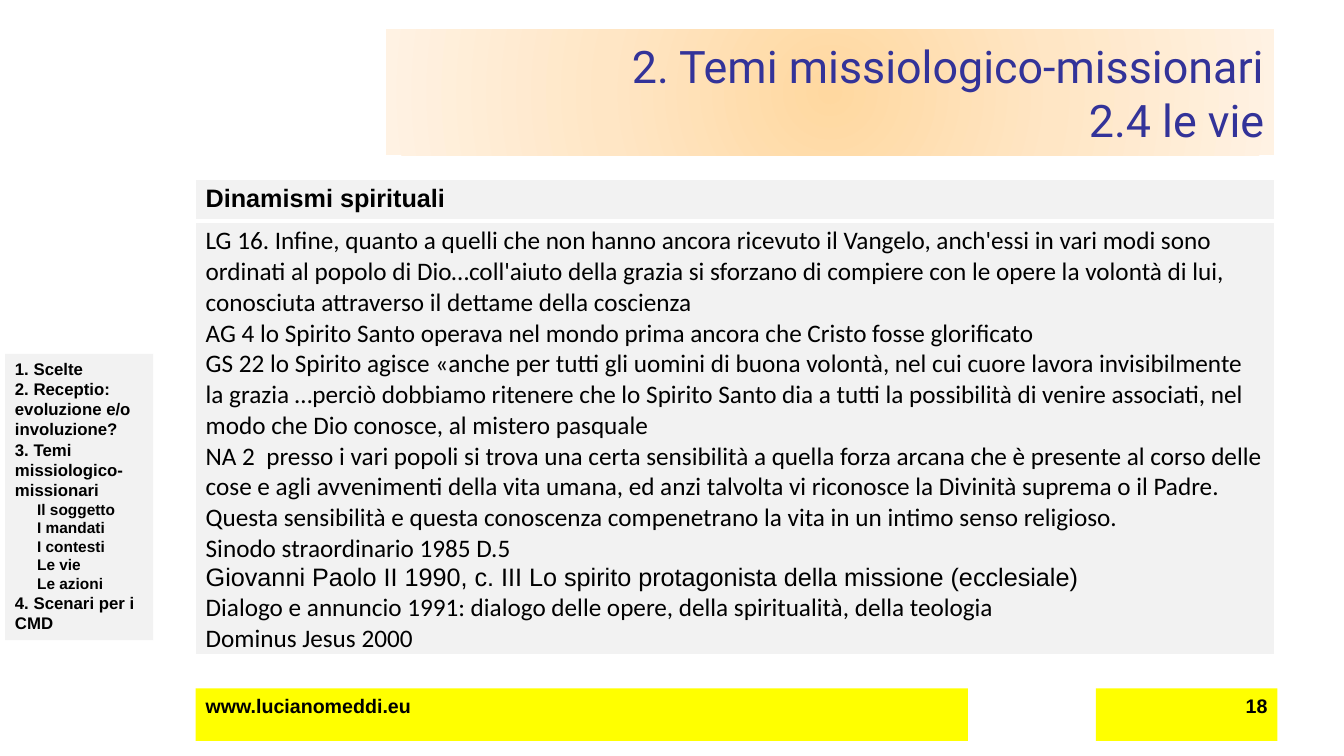
from lxml import etree
from pptx import Presentation
from pptx.dml.color import RGBColor
from pptx.enum.text import MSO_ANCHOR as Anchor, MSO_AUTO_SIZE as Auto, PP_ALIGN as Align
from pptx.oxml import parse_xml
from pptx.oxml.ns import nsdecls, qn
from pptx.util import Inches, Pt


def tint(code):
    return RGBColor.from_string(code)


def write(frame, text, first=False, size=18, font="Arial", color="000000",
          bold=False, align=Align.LEFT, left=0, hang=0):
    para = frame.paragraphs[0] if first else frame.add_paragraph()
    para.alignment = align
    if left:
        props = para._p.get_or_add_pPr()
        props.set("marL", str(Inches(left)))
        props.set("indent", str(Inches(hang)))
    for i, line in enumerate(text.split("\n")):
        if i:
            para.add_line_break()
        run = para.add_run()
        run.text = line
        run.font.size = Pt(size)
        run.font.name = font
        run.font.bold = bold
        run.font.color.rgb = tint(color)


class Deck:
    gray = "F2F2F2"
    gold = "FFFF00"
    navy = "333399"
    glow = [(0, "FFD8A0"), (50, "FFE6C5"), (100, "FFF2E3")]

    def __init__(self):
        self.show = Presentation()
        self.show.slide_width = Inches(13.33)
        self.show.slide_height = Inches(7.5)
        self.slide = self.show.slides.add_slide(self.show.slide_layouts[6])

    def box(self, area, fill, anchor=Anchor.TOP):
        shape = self.slide.shapes.add_textbox(*map(Inches, area))
        shape.fill.solid()
        shape.fill.fore_color.rgb = tint(fill)
        frame = shape.text_frame
        frame.word_wrap = True
        frame.auto_size = Auto.NONE
        frame.vertical_anchor = anchor
        return shape

    def shade(self, shape):
        stops = "".join(
            f'<a:gs pos="{pos * 1000}"><a:srgbClr val="{code}"/></a:gs>'
            for pos, code in self.glow)
        grad = parse_xml(
            f'<a:gradFill {nsdecls("a")} rotWithShape="1"><a:gsLst>{stops}</a:gsLst>'
            '<a:path path="circle"><a:fillToRect l="50000" t="50000" r="50000" b="50000"/>'
            '</a:path></a:gradFill>')
        props = shape.element.spPr
        props.replace(props.find(qn("a:solidFill")), grad)

    def title(self, area, text):
        shape = self.box(area, self.glow[-1][1], Anchor.MIDDLE)
        self.shade(shape)
        write(shape.text_frame, text, first=True, size=32, font="Roboto",
              color=self.navy, align=Align.RIGHT)

    def menu(self, area, items):
        frame = self.box(area, self.gray).text_frame
        frame.auto_size = Auto.SHAPE_TO_FIT_TEXT
        for i, (text, sub) in enumerate(items):
            look = dict(size=11, left=0.28, hang=-0.06) if sub else dict(size=12)
            write(frame, text, first=i == 0, bold=True, **look)

    def foot(self, area, text, align):
        frame = self.box(area, self.gold).text_frame
        write(frame, text, first=True, size=14, bold=True, align=align)

    def edge(self, cell, base):
        props = cell._tc.get_or_add_tcPr()
        for i, side in enumerate(("lnL", "lnR", "lnT", "lnB")):
            width = base if side == "lnB" else 1
            line = etree.Element(qn(f"a:{side}"), w=str(Pt(width)))
            fill = etree.SubElement(line, qn("a:solidFill"))
            etree.SubElement(fill, qn("a:srgbClr"), val="FFFFFF")
            props.insert(i, line)

    def table(self, area, rows, head, lines):
        grid = self.slide.shapes.add_table(2, 1, *map(Inches, area)).table
        for row, high in zip(grid.rows, rows):
            row.height = Inches(high)
        top, body = grid.cell(0, 0), grid.cell(1, 0)
        for cell, base in ((top, 3), (body, 1)):
            cell.fill.solid()
            cell.fill.fore_color.rgb = tint(self.gray)
            self.edge(cell, base)
        write(top.text_frame, head, first=True, bold=True)
        for i, (text, font) in enumerate(lines):
            write(body.text_frame, text, first=i == 0, font=font)


def main():
    deck = Deck()
    deck.menu((0.05, 3.51, 1.47, 2.84), [
        ("1. Scelte", False),
        ("2. Receptio: evoluzione e/o involuzione?", False),
        ("3. Temi missiologico-missionari", False),
        ("Il soggetto", True),
        ("I mandati", True),
        ("I contesti", True),
        ("Le vie", True),
        ("Le azioni", True),
        ("4. Scenari per i CMD", False),
    ])
    deck.title((3.83, 0.29, 8.81, 1.25), "2. Temi missiologico-missionari\n2.4 le vie")
    deck.foot((1.94, 6.83, 7.66, 0.52), "www.lucianomeddi.eu", Align.LEFT)
    deck.foot((10.87, 6.83, 1.8, 0.52), "18", Align.RIGHT)
    deck.table((1.94, 1.78, 10.7, 4.71), (0.41, 4.3), "Dinamismi spirituali", [
        ("LG 16. Infine, quanto a quelli che non hanno ancora ricevuto il Vangelo, "
         "anch'essi in vari modi sono ordinati al popolo di Dio…coll'aiuto della grazia "
         "si sforzano di compiere con le opere la volontà di lui, conosciuta attraverso "
         "il dettame della coscienza", "Calibri"),
        ("AG 4 lo Spirito Santo operava nel mondo prima ancora che Cristo fosse "
         "glorificato", "Calibri"),
        ("GS 22 lo Spirito agisce «anche per tutti gli uomini di buona volontà, nel cui "
         "cuore lavora invisibilmente la grazia …perciò dobbiamo ritenere che lo Spirito "
         "Santo dia a tutti la possibilità di venire associati, nel modo che Dio conosce, "
         "al mistero pasquale", "Calibri"),
        ("NA 2  presso i vari popoli si trova una certa sensibilità a quella forza arcana "
         "che è presente al corso delle cose e agli avvenimenti della vita umana, ed anzi "
         "talvolta vi riconosce la Divinità suprema o il Padre. Questa sensibilità e questa "
         "conoscenza compenetrano la vita in un intimo senso religioso.", "Calibri"),
        ("Sinodo straordinario 1985 D.5", "Calibri"),
        ("Giovanni Paolo II 1990, c. III Lo spirito protagonista della missione "
         "(ecclesiale)", "Arial"),
        ("Dialogo e annuncio 1991: dialogo delle opere, della spiritualità, della "
         "teologia", "Calibri"),
        ("Dominus Jesus 2000", "Calibri"),
    ])
    deck.show.save("out.pptx")


if __name__ == "__main__":
    main()
